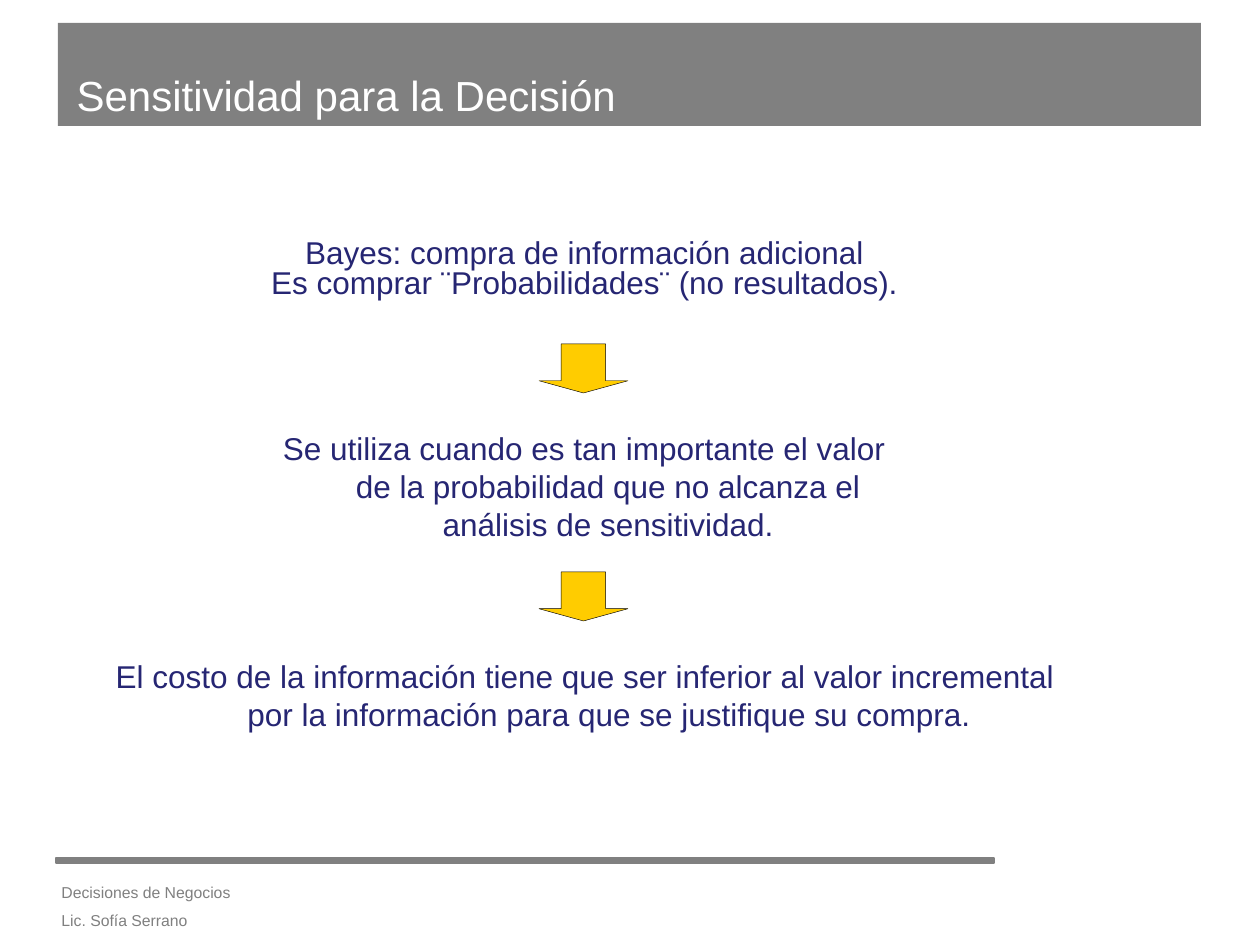
"""Build the decision sensitivity slide."""
from pptx import Presentation
from pptx import util as u
from pptx.dml.color import RGBColor
from pptx.enum import shapes, text
from pptx.oxml.ns import qn
from lxml import etree

GRAY = RGBColor(0x80, 0x80, 0x80)
WHITE = RGBColor(0xFF, 0xFF, 0xFF)
NAVY = RGBColor(0x26, 0x26, 0x73)
GOLD = RGBColor(0xFF, 0xCC, 0x00)
BLACK = RGBColor(0, 0, 0)
LEFT, CENTER = text.PP_ALIGN.LEFT, text.PP_ALIGN.CENTER


def px(n):
    """Turn pixels into EMU."""
    return u.Emu(round(n * 914400 / 126))


class Deck:
    """Hold the style and the current slide."""

    font = "Arial"

    def __init__(self, width, height):
        """Open a presentation with one title and body slide."""
        self.prs = Presentation()
        self.prs.slide_width, self.prs.slide_height = px(width), px(height)
        self.s = self.prs.slides.add_slide(self.prs.slide_layouts[1])

    def shape(self, kind, box, fill, line=None, weight=0.75):
        """Add a filled preset shape."""
        sp = self.s.shapes.add_shape(kind, *map(px, box))
        sp.shadow.inherit = False
        sp.fill.solid()
        sp.fill.fore_color.rgb = fill
        if line is None:
            sp.line.fill.background()
        else:
            sp.line.color.rgb = line
            sp.line.width = u.Pt(weight)
        return sp

    def set_text(self, sp, lines, size, color, align=LEFT, spacing=None,
                 hang=0, anchor=text.MSO_ANCHOR.TOP):
        """Fill a text frame and format its paragraphs."""
        tf = sp.text_frame
        tf.text = lines
        tf.word_wrap = True
        tf.auto_size = text.MSO_AUTO_SIZE.NONE
        tf.vertical_anchor = anchor
        for p in tf.paragraphs:
            p.alignment = align
            p.space_before = u.Pt(0)
            if spacing:
                p.line_spacing = spacing
            pPr = p._p.get_or_add_pPr()
            pPr.set("marL", str(px(hang)))
            pPr.set("indent", str(-px(hang)))
            etree.SubElement(pPr, qn("a:buNone"))
            for r in p.runs:
                r.font.name = self.font
                r.font.size = u.Pt(size)
                r.font.color.rgb = color

    def placeholder(self, index, box, lines, size, color, **style):
        """Move a template placeholder to the front and fill it."""
        sp = self.s.placeholders[index]
        sp.left, sp.top, sp.width, sp.height = map(px, box)
        self.s.shapes._spTree.append(sp._element)
        self.set_text(sp, lines, size, color, **style)

    def textbox(self, box, lines, size, color, **style):
        """Add a text box."""
        sp = self.s.shapes.add_textbox(*map(px, box))
        self.set_text(sp, lines, size, color, **style)


def main():
    """Lay out the slide and save it."""
    deck = Deck(1260, 945)
    rect, arrow = shapes.MSO_SHAPE.RECTANGLE, shapes.MSO_SHAPE.DOWN_ARROW

    deck.shape(rect, (58, 23, 1143, 103), GRAY)
    deck.shape(rect, (56, 858, 938, 5), GRAY, GRAY)
    deck.textbox((49, 867, 384, 69), "Decisiones de Negocios\nLic. Sofía Serrano",
                 9, GRAY, spacing=1.5)
    deck.placeholder(0, (64, 59, 1137, 71), "Sensitividad para la Decisión",
                     24, WHITE, anchor=text.MSO_ANCHOR.MIDDLE)
    deck.placeholder(1, (103, 234, 963, 149),
                     "Bayes: compra de información adicional\n"
                     "Es comprar ¨Probabilidades¨ (no resultados).",
                     18, NAVY, align=CENTER, spacing=0.8)

    steps = (
        ((252, 423, 664, 127), "Se utiliza cuando es tan importante el valor de la "
         "probabilidad que no alcanza el análisis de sensitividad."),
        ((101, 651, 968, 89), "El costo de la información tiene que ser inferior al "
         "valor incremental por la información para que se justifique su compra."),
    )
    for box, sentence in steps:
        deck.textbox(box, sentence, 18, NAVY, align=CENTER, hang=48)
    for box, _ in steps:
        sp = deck.shape(arrow, (539, box[1] - 79, 89, 49), GOLD, BLACK, 0.25)
        sp.adjustments[0], sp.adjustments[1] = 0.5, 0.25

    deck.prs.save("out.pptx")


if __name__ == "__main__":
    main()
